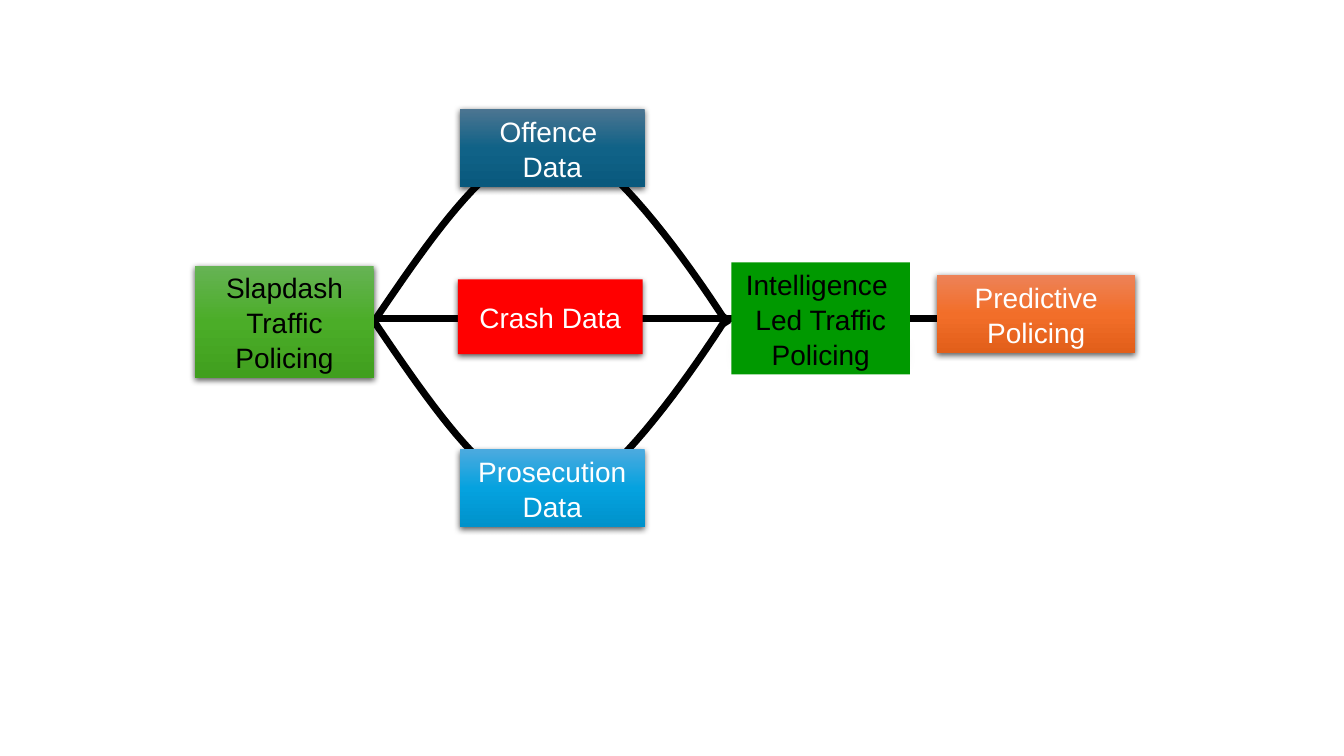
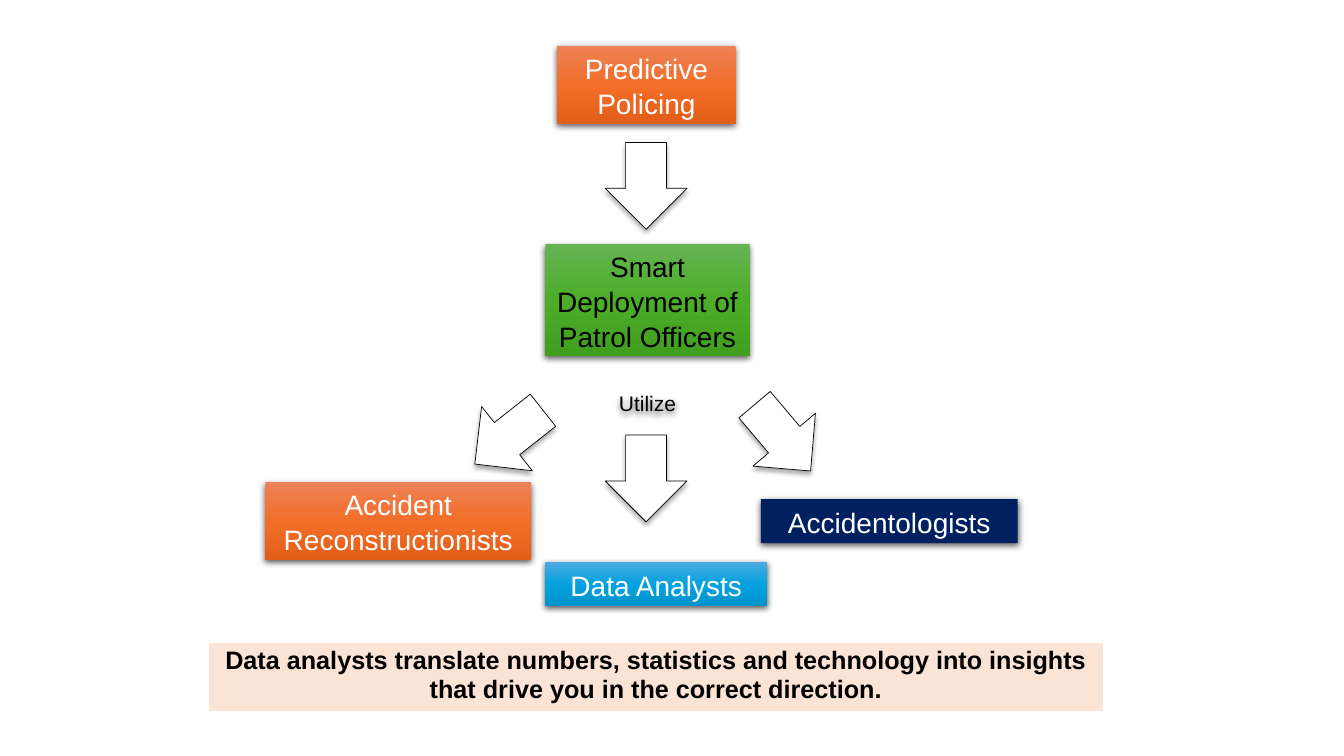
from copy import deepcopy

from lxml.etree import SubElement
from pptx import Presentation
from pptx.dml.color import RGBColor
from pptx.enum.shapes import MSO_CONNECTOR, MSO_SHAPE
from pptx.enum.text import MSO_ANCHOR, PP_ALIGN
from pptx.oxml.ns import qn
from pptx.util import Pt

BLACK = RGBColor(0x00, 0x00, 0x00)
WHITE = RGBColor(0xFF, 0xFF, 0xFF)
RED = RGBColor(0xFF, 0x00, 0x00)
NAVY = RGBColor(0x00, 0x20, 0x60)
DEEP_GREEN = RGBColor(0x00, 0x99, 0x00)
PEACH = RGBColor(0xFB, 0xE3, 0xD6)

# Gradients run from top to bottom
ORANGE = (RGBColor(0xED, 0x82, 0x57), RGBColor(0xF2, 0x6E, 0x29), RGBColor(0xE2, 0x5F, 0x1A))
GREEN = (RGBColor(0x66, 0xB3, 0x54), RGBColor(0x4B, 0xAD, 0x28), RGBColor(0x40, 0x9F, 0x1E))
BLUE = (RGBColor(0x4C, 0xAA, 0xDF), RGBColor(0x05, 0xA2, 0xDF), RGBColor(0x00, 0x92, 0xCB))
TEAL = (RGBColor(0x4C, 0x75, 0x91), RGBColor(0x10, 0x62, 0x87), RGBColor(0x09, 0x59, 0x7D))

# Shadows: opacity %, blur, distance, extra attributes
BOX_SHADOW = (63, 4.5, 1.5, {})
ARROW_SHADOW = (32, 3.5, 2.2, {})
FLOOR_SHADOW = (15, 12, 25, {"sx": "90000", "sy": "-19000"})

ONE_LINE, TWO_LINES, THREE_LINES = 31.5, 55.5, 80


def bezier(start, c1, c2, end, steps=24):
    """Return points along a cubic curve, without its start."""
    points = []
    for i in range(1, steps + 1):
        t = i / steps
        u = 1 - t
        points.append(tuple(
            u**3 * a + 3 * u * u * t * b + 3 * u * t * t * c + t**3 * d
            for a, b, c, d in zip(start, c1, c2, end)))
    return points


class Deck:
    """Holds the presentation, its style and the current slide."""

    font = "Arial"
    text_size = 20
    line_width = 5

    def __init__(self):
        self.prs = Presentation()
        self.prs.slide_width, self.prs.slide_height = Pt(960), Pt(540)

    def new_slide(self):
        self.shapes = self.prs.slides.add_slide(self.prs.slide_layouts[6]).shapes

    def shadow(self, sp, style):
        opacity, blur, distance, extra = style
        sp.shadow.inherit = False
        effects = sp._element.spPr.find(qn("a:effectLst"))
        outer = SubElement(effects, qn("a:outerShdw"), blurRad=str(Pt(blur)),
                           dist=str(Pt(distance)), dir="5400000", **extra,
                           algn="ctr", rotWithShape="0")
        color = SubElement(outer, qn("a:srgbClr"), val=str(BLACK))
        SubElement(color, qn("a:alpha"), val=str(opacity * 1000))

    def fill(self, sp, color):
        """Fill with one colour, or with three as a vertical gradient."""
        if isinstance(color, RGBColor):
            sp.fill.solid()
            sp.fill.fore_color.rgb = color
            return
        sp.fill.gradient()
        sp.fill.gradient_angle = 270
        stop_list = sp._element.spPr.find(".//" + qn("a:gsLst"))
        stop_list.insert(1, deepcopy(stop_list[0]))
        for stop, rgb, position in zip(sp.fill.gradient_stops, color, (0, 0.5, 1)):
            stop.color.rgb = rgb
            stop.position = position

    def add_text(self, tf, lines, color, size=text_size, bold=False, spacing=1.04):
        tf.word_wrap = True
        for i, line in enumerate(lines):
            p = tf.add_paragraph() if i else tf.paragraphs[0]
            p.alignment = PP_ALIGN.CENTER
            p.line_spacing = spacing
            r = p.add_run()
            r.text = line
            r.font.name, r.font.size, r.font.bold = self.font, Pt(size), bold
            r.font.color.rgb = color

    def box(self, x, y, w, h, lines, fill, color=WHITE, shadow=BOX_SHADOW):
        sp = self.shapes.add_shape(MSO_SHAPE.RECTANGLE, Pt(x), Pt(y), Pt(w), Pt(h))
        self.fill(sp, fill)
        sp.line.fill.background()
        self.shadow(sp, shadow)
        sp.text_frame.vertical_anchor = MSO_ANCHOR.MIDDLE
        self.add_text(sp.text_frame, lines, color)

    def block_arrow(self, x, y, rotation):
        sp = self.shapes.add_shape(MSO_SHAPE.RIGHT_ARROW, Pt(x), Pt(y), Pt(62), Pt(58.5))
        sp.rotation = rotation
        self.fill(sp, WHITE)
        sp.line.color.rgb, sp.line.width = BLACK, Pt(0.5)
        self.shadow(sp, ARROW_SHADOW)

    def label(self, x, y, w, h, text, size):
        sp = self.shapes.add_textbox(Pt(x), Pt(y), Pt(w), Pt(h))
        self.shadow(sp, BOX_SHADOW)
        self.add_text(sp.text_frame, [text], BLACK, size)

    def line(self, x1, y1, x2, y2):
        cn = self.shapes.add_connector(MSO_CONNECTOR.STRAIGHT, Pt(x1), Pt(y1), Pt(x2), Pt(y2))
        cn.line.color.rgb, cn.line.width = BLACK, Pt(self.line_width)
        SubElement(cn._element.spPr, qn("a:effectLst"))

    def curve(self, start, *segments):
        points = [start]
        for segment in segments:
            points += bezier(points[-1], *segment)
        (x, y), *rest = [(Pt(px), Pt(py)) for px, py in points]
        builder = self.shapes.build_freeform(x, y)
        builder.add_line_segments(rest, close=False)
        sp = builder.convert_to_shape()
        sp.fill.background()
        sp.line.color.rgb, sp.line.width = BLACK, Pt(self.line_width)
        sp.shadow.inherit = False

    def banner(self, x, y, w, h, text):
        """Add a one-cell table with white borders."""
        table = self.shapes.add_table(1, 1, Pt(x), Pt(y), Pt(w), Pt(h)).table
        cell = table.cell(0, 0)
        self.add_text(cell.text_frame, [text], BLACK, 18, bold=True, spacing=1.0)
        tc_pr = cell._tc.get_or_add_tcPr()
        for side, width in (("L", 1), ("R", 1), ("T", 1), ("B", 3)):
            border = SubElement(tc_pr, qn("a:ln" + side), w=str(Pt(width)))
            solid = SubElement(border, qn("a:solidFill"))
            SubElement(solid, qn("a:srgbClr"), val=str(WHITE))
        cell.fill.solid()
        cell.fill.fore_color.rgb = PEACH


def policing_path(deck):
    deck.new_slide()
    deck.line(263.5, 227.5, 726, 227.5)
    deck.box(669.5, 196.5, 141.5, TWO_LINES, ["Predictive", "Policing"], ORANGE)
    deck.box(327, 199.5, 132, 53.5, ["Crash Data"], RED)
    deck.curve((265.5, 227), ((310, 292.5), (354, 358), (396.5, 357)),
               ((438.5, 357), (520, 225.5), (520, 225.5)))
    deck.box(328.5, 321, 132, TWO_LINES, ["Prosecution", "Data"], BLUE)
    deck.curve((266.5, 230.5), ((310, 166.5), (354, 101.5), (396.5, 101.5)),
               ((439, 102), (520, 232), (520, 232)))
    deck.box(328.5, 78, 132, TWO_LINES, ["Offence ", "Data"], TEAL)
    deck.box(522.5, 187.5, 127.5, THREE_LINES, ["Intelligence ", "Led Traffic Policing"],
             DEEP_GREEN, BLACK, FLOOR_SHADOW)
    deck.box(139.5, 190, 127.5, THREE_LINES, ["Slapdash Traffic Policing"], GREEN, BLACK)


def smart_deployment(deck):
    deck.new_slide()
    deck.box(389.5, 174.5, 146, THREE_LINES, ["Smart Deployment of Patrol Officers"],
             GREEN, BLACK)
    for x, y, rotation in ((430.5, 103.5, 90), (430.5, 312.5, 90),
                           (332.5, 283, 141.7), (528, 283.5, 49.8)):
        deck.block_arrow(x, y, rotation)
    deck.box(389.5, 401.5, 158.5, ONE_LINE, ["Data Analysts"], BLUE)
    deck.box(543.5, 356.5, 183.5, ONE_LINE, ["Accidentologists"], NAVY)
    deck.box(189.5, 344.5, 190, TWO_LINES, ["Accident Reconstructionists"], ORANGE)
    deck.label(396.5, 275, 132, 25, "Utilize", 15)
    deck.box(398, 33, 127.5, TWO_LINES, ["Predictive", "Policing"], ORANGE)
    deck.banner(148.5, 458.5, 640, 48.6,
                "Data analysts translate numbers, statistics and technology into insights "
                "that drive you in the correct direction.")


def main():
    deck = Deck()
    policing_path(deck)
    smart_deployment(deck)
    deck.prs.save("out.pptx")


if __name__ == "__main__":
    main()
